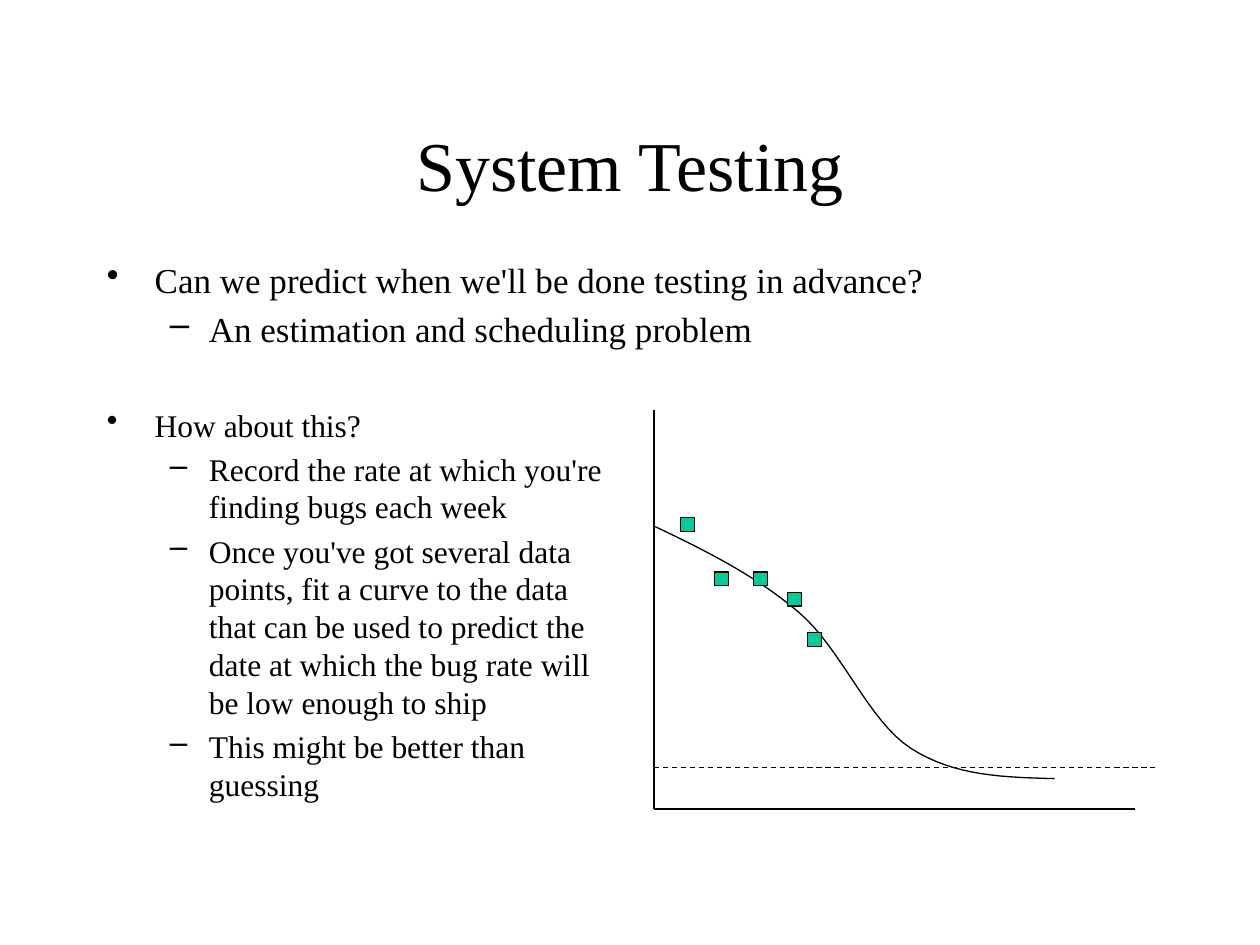
from lxml import etree
from pptx import Presentation
from pptx.dml.color import RGBColor
from pptx.enum.dml import MSO_LINE
from pptx.enum.shapes import MSO_CONNECTOR, MSO_SHAPE
from pptx.enum.text import MSO_ANCHOR, PP_ALIGN
from pptx.oxml.ns import qn
from pptx.util import Inches, Pt

RECT = MSO_SHAPE.RECTANGLE
LINE = MSO_CONNECTOR.STRAIGHT
DASH = MSO_LINE.DASH
MID = MSO_ANCHOR.MIDDLE
CENTER = PP_ALIGN.CENTER

FONT = "Times New Roman"
INK = "000000"
GREEN = "00CC99"

TITLE = "System Testing"
BLOCKS = [
    ((0.75, 2, 8.33, 1.67), 20, [
        (0, "Can we predict when we'll be done testing in advance?"),
        (1, "An estimation and scheduling problem"),
    ]),
    ((0.75, 3.17, 4.17, 4.5), 18, [
        (0, "How about this?"),
        (1, "Record the rate at which you're finding bugs each week"),
        (1, "Once you've got several data points, fit a curve to the data that "
            "can be used to predict the date at which the bug rate will be "
            "low enough to ship"),
        (1, "This might be better than guessing"),
    ]),
]
LEVELS = [("•", 0.38, -0.38), ("–", 0.81, -0.31)]

LEFT, BASE = 5.19, 6.42
AXES = [
    ((LEFT, 3.25), (LEFT, BASE), False),
    ((LEFT, BASE), (9.01, BASE), False),
    ((LEFT, 6.09), (9.17, 6.09), True),
]
CURVE = [
    (5.2, 4.18), (5.6, 4.37), (6, 4.57), (6.34, 4.86), (6.68, 5.15),
    (6.89, 5.72), (7.23, 5.94), (7.57, 6.16), (7.97, 6.17), (8.37, 6.18),
]
STEPS = 16
BUGS = [(5.4, 4.11), (5.67, 4.54), (5.98, 4.54), (6.25, 4.7), (6.41, 5.02)]
SIDE = 0.11


def color(code):
    return RGBColor.from_string(code)


def place(shape, box):
    shape.left, shape.top, shape.width, shape.height = map(Inches, box)


def write(para, text, size):
    run = para.add_run()
    run.text = text
    run.font.name = FONT
    run.font.size = Pt(size)
    run.font.color.rgb = color(INK)


def stroke(shape):
    shape.line.color.rgb = color(INK)
    shape.line.width = Pt(0.75)


def add_title(slide):
    title = slide.shapes.title
    place(title, (0.75, 0.67, 8.5, 1.25))
    frame = title.text_frame
    frame.vertical_anchor = MID
    para = frame.paragraphs[0]
    para.alignment = CENTER
    write(para, TITLE, 40)


def add_list(slide, box, size, items):
    frame = slide.shapes.add_textbox(*map(Inches, box)).text_frame
    frame.word_wrap = True
    for i, (level, text) in enumerate(items):
        para = frame.add_paragraph() if i else frame.paragraphs[0]
        mark, left, hang = LEVELS[level]
        para.level = level
        para.line_spacing = Pt(size * 1.2)
        para.space_before = Pt(size * 0.2)
        props = para._p.get_or_add_pPr()
        props.set("marL", str(Inches(left)))
        props.set("indent", str(Inches(hang)))
        etree.SubElement(props, qn("a:buChar")).set("char", mark)
        write(para, text, size)


def add_line(slide, start, end, dashed):
    line = slide.shapes.add_connector(LINE, *map(Inches, start + end))
    stroke(line)
    if dashed:
        line.line.dash_style = DASH
    etree.SubElement(line._element.spPr, qn("a:effectLst"))


def bezier(knots, t):
    s = 1 - t
    parts = (s ** 3, 3 * s * s * t, 3 * s * t * t, t ** 3)
    return tuple(
        Inches(sum(w * v for w, v in zip(parts, axis))) for axis in zip(*knots)
    )


def add_curve(slide):
    dots = [
        bezier(CURVE[i:i + 4], n / STEPS)
        for i in range(0, len(CURVE) - 1, 3)
        for n in range(1, STEPS + 1)
    ]
    pen = slide.shapes.build_freeform(*map(Inches, CURVE[0]))
    pen.add_line_segments(dots, close=False)
    curve = pen.convert_to_shape()
    curve.fill.background()
    curve.shadow.inherit = False
    stroke(curve)


def add_bug(slide, left, top):
    bug = slide.shapes.add_shape(RECT, *map(Inches, (left, top, SIDE, SIDE)))
    bug.fill.solid()
    bug.fill.fore_color.rgb = color(GREEN)
    bug.shadow.inherit = False
    stroke(bug)


def main():
    deck = Presentation()
    deck.slide_width, deck.slide_height = Inches(10), Inches(7.5)
    slide = deck.slides.add_slide(deck.slide_layouts[5])
    add_title(slide)
    add_curve(slide)
    for axis in AXES:
        add_line(slide, *axis)
    for spot in BUGS:
        add_bug(slide, *spot)
    for block in BLOCKS:
        add_list(slide, *block)
    deck.save("out.pptx")


if __name__ == "__main__":
    main()
